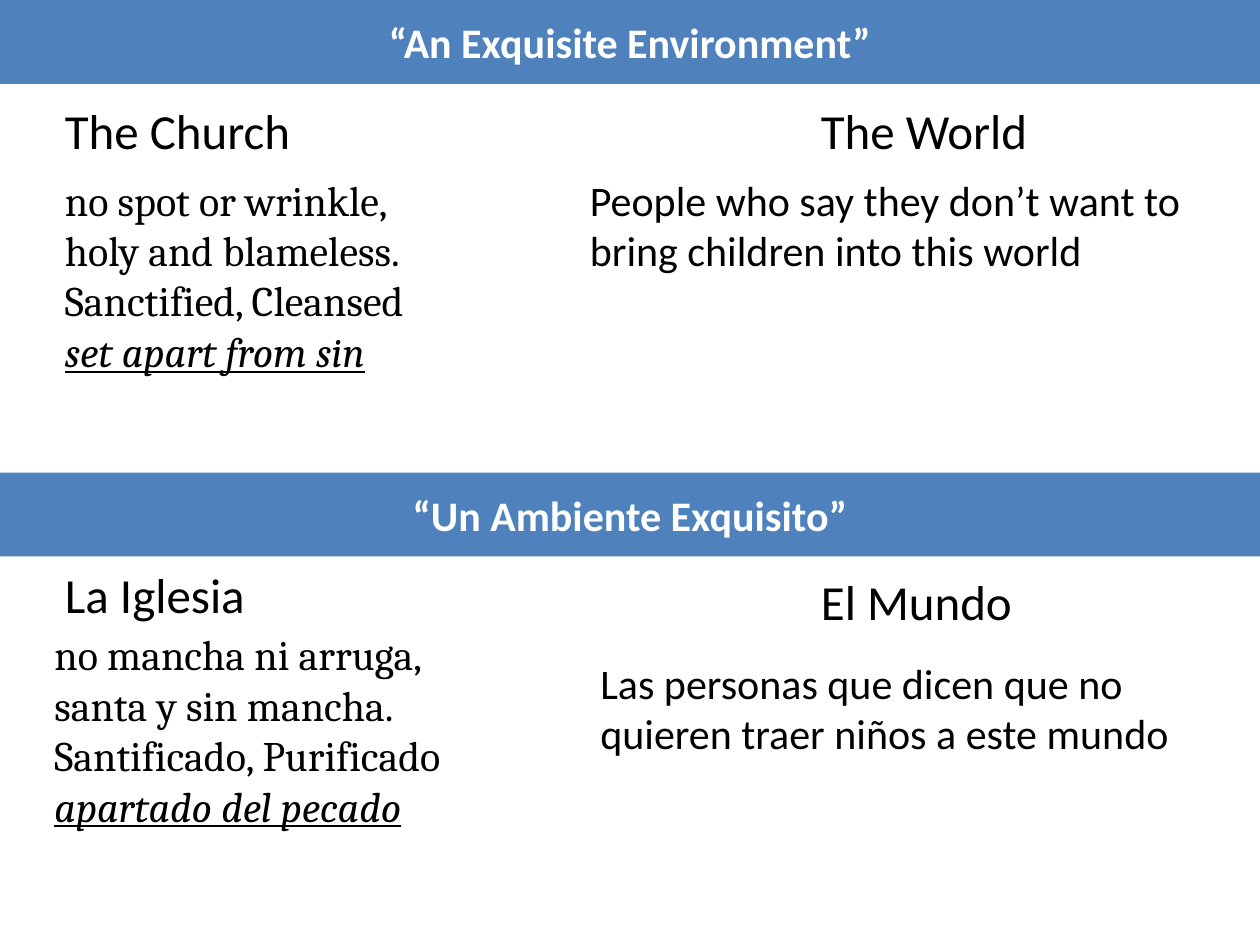
from dataclasses import dataclass

import pptx
import pptx.dml.color
import pptx.enum.shapes
import pptx.enum.text
import pptx.util

COLUMNS, ROWS = 120, 90
CELL = pptx.util.Inches(10) // COLUMNS
BLUE, WHITE, BLACK = "4F81BD", "FFFFFF", "000000"

BANNER = {"size": pptx.util.Pt(24), "name": "Calibri", "bold": True}
HEADING = {"size": pptx.util.Pt(28), "name": "Calibri"}
REMARK = {"size": pptx.util.Pt(24), "name": "Calibri"}
TRAITS = {"size": pptx.util.Pt(24), "name": "Cambria"}
STRESSED = TRAITS | {"italic": True, "underline": True}


@dataclass
class Line:
    text: str
    style: dict


@dataclass
class Block:
    """Text placed by column and row, with its size in grid cells."""
    column: float
    row: float
    width: float
    height: float
    lines: list[Line]


@dataclass
class Section:
    title: str
    row: float
    blocks: list[Block]


def color(value: str) -> pptx.dml.color.RGBColor:
    return pptx.dml.color.RGBColor.from_string(value)


def grid(*cells: float) -> list[int]:
    return [round(cell * CELL) for cell in cells]


def write_line(para, line: Line, text_color: str) -> None:
    span = para.add_run()
    span.text = line.text
    for attribute, value in line.style.items():
        setattr(span.font, attribute, value)
    span.font.color.rgb = color(text_color)


def draw_banner(page, title: str, row: float) -> None:
    bar = page.shapes.add_shape(
        pptx.enum.shapes.MSO_SHAPE.RECTANGLE, *grid(0, row, COLUMNS, 8))
    bar.shadow.inherit = False
    bar.fill.solid()
    bar.fill.fore_color.rgb = color(BLUE)
    bar.line.fill.background()
    bar.text_frame.vertical_anchor = pptx.enum.text.MSO_ANCHOR.MIDDLE
    para = bar.text_frame.paragraphs[0]
    para.alignment = pptx.enum.text.PP_ALIGN.CENTER
    write_line(para, Line(title, BANNER), WHITE)


def draw_block(page, block: Block) -> None:
    box = page.shapes.add_textbox(
        *grid(block.column, block.row, block.width, block.height))
    frame = box.text_frame
    frame.word_wrap = True
    frame.auto_size = pptx.enum.text.MSO_AUTO_SIZE.SHAPE_TO_FIT_TEXT
    for index, line in enumerate(block.lines):
        para = frame.add_paragraph() if index else frame.paragraphs[0]
        write_line(para, line, BLACK)


def heading(column: float, row: float, width: float, text: str) -> Block:
    return Block(column, row, width, 6.87, [Line(text, HEADING)])


def traits(column: float, row: float, width: float,
           plain: list[str], stressed: str) -> Block:
    lines = [Line(text, TRAITS) for text in plain]
    return Block(column, row, width, 20.6, lines + [Line(stressed, STRESSED)])


def remark(column: float, row: float, width: float, text: str) -> Block:
    return Block(column, row, width, 10.9, [Line(text, REMARK)])


SECTIONS = [
    # English half
    Section("“An Exquisite Environment”", 0, [
        heading(5, 9, 81, "The Church"),
        traits(5, 16, 111,
               ["no spot or wrinkle,", "holy and blameless.",
                "Sanctified, Cleansed"],
               "set apart from sin"),
        heading(77, 9, 37.8, "The World"),
        remark(55, 16, 65, "People who say they don’t want to "
                           "bring children into this world"),
    ]),
    # Spanish half
    Section("“Un Ambiente Exquisito”", ROWS / 2, [
        traits(4, 59.3, 60,
               ["no mancha ni arruga,", "santa y sin mancha.",
                "Santificado, Purificado"],
               "apartado del pecado"),
        heading(5, 53.2, 81, "La Iglesia"),
        heading(77, 53.8, 37.8, "El Mundo"),
        remark(56, 62, 60, "Las personas que dicen que no "
                           "quieren traer niños a este mundo"),
    ]),
]


def main() -> None:
    deck = pptx.Presentation()
    deck.slide_width, deck.slide_height = grid(COLUMNS, ROWS)
    page = deck.slides.add_slide(deck.slide_layouts[6])
    for section in SECTIONS:
        draw_banner(page, section.title, section.row)
        for block in section.blocks:
            draw_block(page, block)
    deck.save("out.pptx")


if __name__ == "__main__":
    main()
